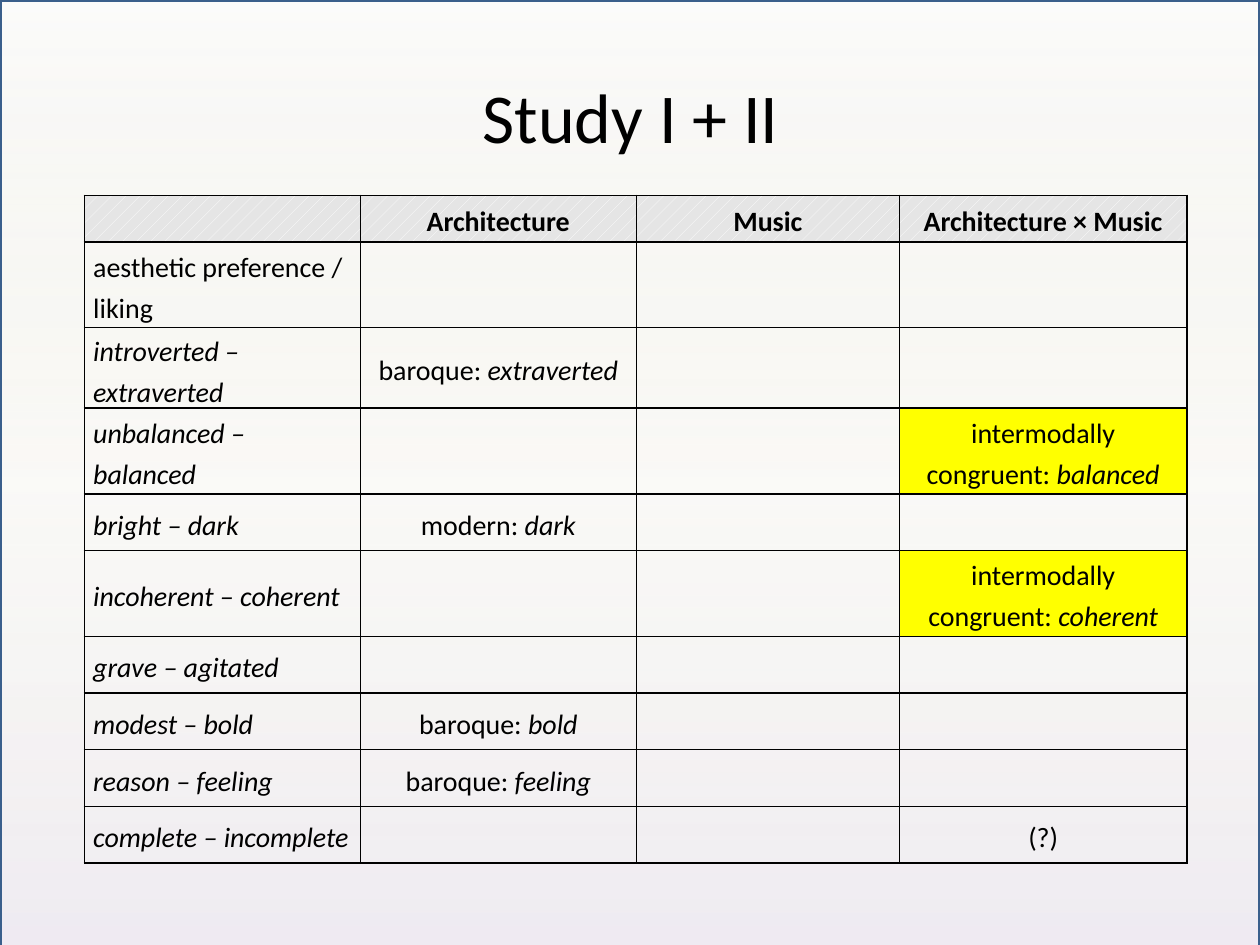
from dataclasses import dataclass

import pptx
import pptx.util
import pptx.dml.color
import pptx.enum.dml
import pptx.enum.shapes
import pptx.enum.text
import pptx.oxml
import pptx.oxml.ns

Pt = pptx.util.Pt
ALIGN = pptx.enum.text.PP_ALIGN
MID = pptx.enum.text.MSO_ANCHOR.MIDDLE
WIDE, HIGH = pptx.util.Inches(10), pptx.util.Inches(7.5)
FONT = "Calibri"
HUES = {
    "ink": "000000", "head": "E5E5E5", "dots": "FFFFFF", "mark": "FFFF00",
    "edge": "3A5F8C", "top": "F2F2F2", "mid": "C4BD97", "low": "B3A2C7",
}
# Stops of the backdrop: place, colour and opacity, both in percent
STOPS = [(0, "top", 30), (50, "mid", 7), (100, "low", 22)]
# Column widths and row heights as percent of the slide
COLS = [21.9, 21.9, 20.9, 22.8]
SLIM, TALL = 6, 9.07
ROWS = [4.93, TALL, SLIM, TALL, SLIM, TALL, SLIM, SLIM, SLIM, SLIM]


@dataclass
class Run:
    text: str
    bold: bool = False
    slant: bool = False


@dataclass
class Note:
    """A finding: its column, plain lead and italic pole."""
    col: int
    lead: str
    pole: str = ""
    mark: bool = False


@dataclass
class Scale:
    name: str
    note: Note | None = None
    slant: bool = True


HEADS = ["", "Architecture", "Music", "Architecture × Music"]
SCALES = [
    Scale("aesthetic preference / liking", slant=False),
    Scale("introverted – extraverted", Note(1, "baroque: ", "extraverted")),
    Scale("unbalanced – balanced",
          Note(3, "intermodally congruent: ", "balanced", True)),
    Scale("bright – dark", Note(1, "modern: ", "dark")),
    Scale("incoherent – coherent",
          Note(3, "intermodally congruent: ", "coherent", True)),
    Scale("grave – agitated"),
    Scale("modest – bold", Note(1, "baroque: ", "bold")),
    Scale("reason – feeling", Note(1, "baroque: ", "feeling")),
    Scale("complete – incomplete", Note(3, "(?)")),
]


def hue(name: str) -> pptx.dml.color.RGBColor:
    return pptx.dml.color.RGBColor.from_string(HUES[name])


def across(share: float) -> int:
    return round(WIDE * share / 100)


def down(share: float) -> int:
    return round(HIGH * share / 100)


def box(left: float, top: float, wide: float, high: float) -> tuple:
    return across(left), down(top), across(wide), down(high)


def xml(body: str):
    """Parse one element, adding the drawing namespace to its tag."""
    tag, rest = body.split(" ", 1)
    return pptx.oxml.parse_xml(f"{tag} {pptx.oxml.ns.nsdecls('a')} {rest}")


def write(para, runs: list[Run], size: float, align) -> None:
    para.alignment = align
    for item in runs:
        run = para.add_run()
        run.text = item.text
        font = run.font
        font.name, font.size = FONT, Pt(size)
        font.bold, font.italic = item.bold, item.slant
        font.color.rgb = hue("ink")


def fill_cell(cell, runs: list[Run], align=ALIGN.CENTER) -> None:
    para = cell.text_frame.paragraphs[0]
    para.line_spacing = 1.2
    para.space_before = para.space_after = Pt(4)
    write(para, runs, 16, align)


def frame_cell(cell) -> None:
    """Set the insets, clear the fill and rule all four sides."""
    cell.vertical_anchor = MID
    cell.margin_left = cell.margin_right = pptx.util.Inches(0.07)
    cell.margin_top = cell.margin_bottom = 0
    props = cell._tc.get_or_add_tcPr()
    for side in ("lnL", "lnR", "lnT", "lnB"):
        props.append(xml(
            f'<a:{side} w="{Pt(1)}"><a:solidFill><a:srgbClr val="{HUES["ink"]}"/>'
            f"</a:solidFill></a:{side}>"))
    cell.fill.background()


def draw_back(slide) -> None:
    rect = slide.shapes.add_shape(
        pptx.enum.shapes.MSO_SHAPE.RECTANGLE, *box(0, 0, 100, 102.5))
    rect.shadow.inherit = False
    rect.line.color.rgb = hue("edge")
    rect.line.width = Pt(2)
    rect.fill.gradient()
    rect.fill.gradient_angle = 270
    stops = rect._element.spPr.find(".//" + pptx.oxml.ns.qn("a:gsLst"))
    for old in list(stops):
        stops.remove(old)
    for place, name, alpha in STOPS:
        stops.append(xml(
            f'<a:gs pos="{place * 1000}"><a:srgbClr val="{HUES[name]}">'
            f'<a:alpha val="{alpha * 1000}"/></a:srgbClr></a:gs>'))


def draw_title(slide) -> None:
    frame = slide.shapes.add_textbox(*box(11.4, 3.87, 77.3, 16.67)).text_frame
    frame.word_wrap = True
    frame.vertical_anchor = MID
    write(frame.paragraphs[0], [Run("Study I + II")], 40, ALIGN.CENTER)


def draw_table(slide) -> None:
    area = box(6.7, 20.67, sum(COLS), sum(ROWS))
    table = slide.shapes.add_table(len(ROWS), len(COLS), *area).table
    table.first_row = table.horz_banding = False
    for col, share in zip(table.columns, COLS):
        col.width = across(share)
    for row, share in zip(table.rows, ROWS):
        row.height = down(share)
    for cell in table.iter_cells():
        frame_cell(cell)

    for col, head in enumerate(HEADS):
        cell = table.cell(0, col)
        cell.fill.patterned()
        cell.fill.pattern = pptx.enum.dml.MSO_PATTERN.PERCENT_10
        cell.fill.fore_color.rgb = hue("dots")
        cell.fill.back_color.rgb = hue("head")
        if head:
            fill_cell(cell, [Run(head, bold=True)])

    for row, scale in enumerate(SCALES, 1):
        fill_cell(table.cell(row, 0), [Run(scale.name, slant=scale.slant)],
                  ALIGN.LEFT)
        note = scale.note
        if note:
            cell = table.cell(row, note.col)
            runs = [Run(note.lead)]
            if note.pole:
                runs.append(Run(note.pole, slant=True))
            fill_cell(cell, runs)
            if note.mark:
                cell.fill.solid()
                cell.fill.fore_color.rgb = hue("mark")


def main() -> None:
    deck = pptx.Presentation()
    deck.slide_width, deck.slide_height = WIDE, HIGH
    slide = deck.slides.add_slide(deck.slide_layouts[6])
    draw_back(slide)
    draw_title(slide)
    draw_table(slide)
    deck.save("out.pptx")


if __name__ == "__main__":
    main()
